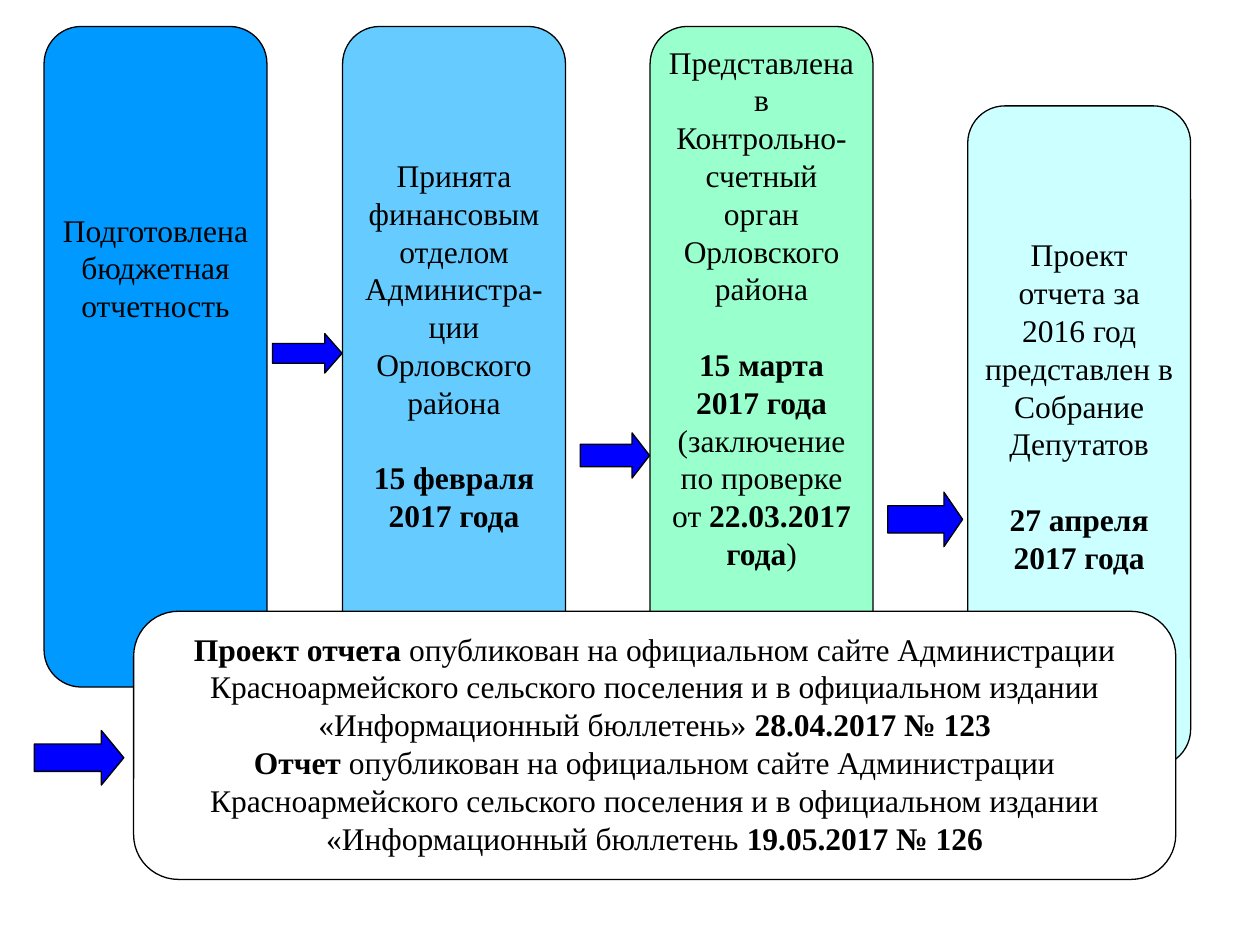
from dataclasses import dataclass
from pptx import Presentation
from pptx.dml.color import RGBColor as RGB
from pptx.enum.shapes import MSO_SHAPE as Kind
from pptx.enum.text import MSO_ANCHOR as Anchor, PP_ALIGN as Align
from pptx.util import Pt


@dataclass(frozen=True)
class Theme:
    font: str = "Times New Roman"
    size: float = 18
    pitch: float = 21.6
    ink: str = "000000"
    arrow: str = "0000FF"
    panel: str = "FFFFFF"
    steps: tuple = ("0099FF", "66CCFF", "99FFCC", "CCFFFF")
    line: float = 0.75
    inset: float = 3
    round: float = 0.167


THEME = Theme()
GAP = ""  # an empty entry opens a one-line gap before the next paragraph

# Each step: left, top, lead above the text, paragraphs (*bold*)
STEPS = [
    (25.2, 15.1, 96, ["Подготовлена", "бюджетная", "отчетность"]),
    (195.8, 15.1, 64.8, [
        "Принята", "финансовым отделом Администра-", "ции Орловского района",
        GAP, "*15 февраля*", "*2017 года*"]),
    (371.5, 15.1, 0, [
        "Представлена в Контрольно-счетный орган Орловского района",
        GAP, "*15 марта 2017 года*",
        "(заключение по проверке от *22.03.2017 года*)"]),
    (553, 60.5, 64.8, [
        "Проект отчета за 2016 год представлен в Собрание", "Депутатов",
        GAP, "*27 апреля 2017 года*"]),
]
STEP_SIZE = (127.4, 377.5)

# Each arrow: box and head length relative to its height
ARROWS = [
    ((155.7, 190.6, 39.8, 22.6), 0.439),
    ((331.6, 247.4, 39.6, 25.8), 0.387),
    ((507.3, 281.2, 42.8, 31.2), 0.342),
    ((19.6, 417.4, 51.2, 31.2), 0.411),
]

PANEL = (76.4, 349.3, 595.5, 153.2)
NEWS = [
    "*Проект отчета* опубликован на официальном сайте Администрации "
    "Красноармейского сельского поселения и в официальном издании "
    "«Информационный бюллетень» *28.04.2017 № 123*",
    "*Отчет* опубликован на официальном сайте Администрации "
    "Красноармейского сельского поселения и в официальном издании "
    "«Информационный бюллетень *19.05.2017 № 126*",
]


def shape(slide, kind, box, fill, adjust):
    """Add an outlined, filled preset shape."""
    item = slide.shapes.add_shape(kind, *map(Pt, box))
    item.shadow.inherit = False
    item.fill.solid()
    item.fill.fore_color.rgb = RGB.from_string(fill)
    item.line.color.rgb = RGB.from_string(THEME.ink)
    item.line.width = Pt(THEME.line)
    for index, value in enumerate(adjust):
        item.adjustments[index] = value
    return item


def write(frame, lines):
    """Write centred paragraphs, with bold between asterisks."""
    first, gap = True, False
    for line in lines:
        if line == GAP:
            gap = True
            continue
        para = frame.paragraphs[0] if first else frame.add_paragraph()
        style = {"alignment": Align.CENTER, "line_spacing": Pt(THEME.pitch),
                 "space_before": Pt(THEME.pitch if gap else 0)}
        for name, value in style.items():
            setattr(para, name, value)
        for index, part in enumerate(line.split("*")):
            if part:
                run = para.add_run()
                run.text = part
                look = {"name": THEME.font, "size": Pt(THEME.size),
                        "bold": index % 2 == 1}
                for name, value in look.items():
                    setattr(run.font, name, value)
                run.font.color.rgb = RGB.from_string(THEME.ink)
        first, gap = False, False


def card(slide, box, fill, lines, lead=0):
    """Rounded card with text that starts below a lead."""
    item = shape(slide, Kind.ROUNDED_RECTANGLE, box, fill, [THEME.round])
    frame = item.text_frame
    edge = Pt(THEME.inset)
    style = {"word_wrap": True, "vertical_anchor": Anchor.TOP,
             "margin_left": edge, "margin_right": edge,
             "margin_top": Pt(THEME.inset + lead), "margin_bottom": edge}
    for name, value in style.items():
        setattr(frame, name, value)
    write(frame, lines)


def arrow(slide, box, head):
    shape(slide, Kind.RIGHT_ARROW, box, THEME.arrow, [0.5, head])


def main():
    deck = Presentation()
    deck.slide_width, deck.slide_height = Pt(720), Pt(540)
    slide = deck.slides.add_slide(deck.slide_layouts[6])

    # Four steps of the report
    for (left, top, lead, lines), fill in zip(STEPS, THEME.steps):
        card(slide, (left, top, *STEP_SIZE), fill, lines, lead)

    # Publication panel over the steps
    card(slide, PANEL, THEME.panel, NEWS)

    # Arrows between the parts
    for box, head in ARROWS:
        arrow(slide, box, head)

    deck.save("out.pptx")


if __name__ == "__main__":
    main()
